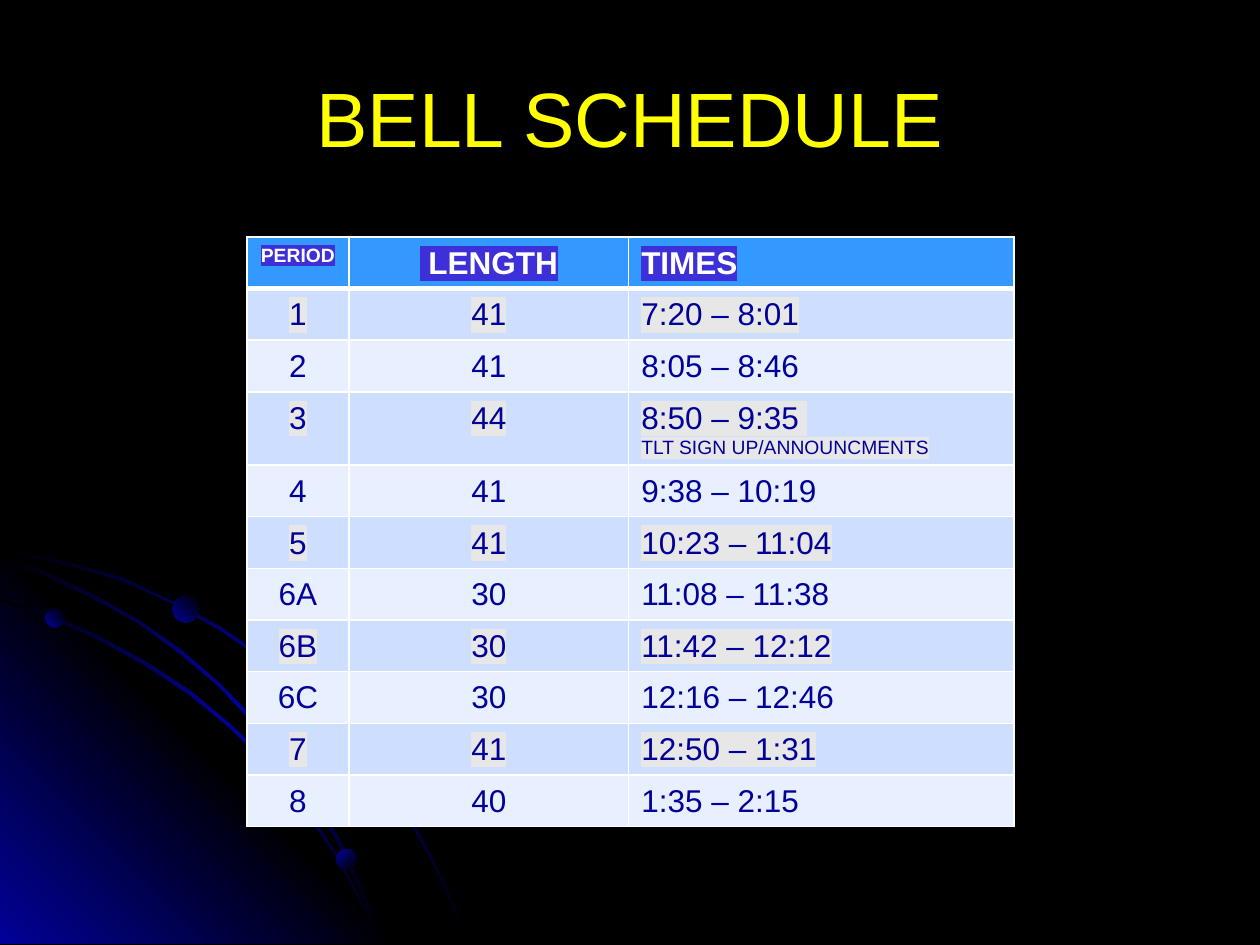
from dataclasses import dataclass

from pptx import Presentation
from pptx.dml.color import RGBColor
from pptx.enum.shapes import MSO_SHAPE
from pptx.enum.text import MSO_ANCHOR, PP_ALIGN
from pptx.oxml import parse_xml
from pptx.oxml.ns import nsdecls, qn
from pptx.util import Inches, Pt


@dataclass(frozen=True)
class Theme:
    font: str = "Arial"
    black: str = "000000"
    navy: str = "010199"
    yellow: str = "FFFF00"
    white: str = "FFFFFF"
    head: str = "3399FF"
    bands: tuple = ("E8EFFF", "CEDEFF")
    head_mark: str = "3E30D9"
    band_mark: str = "E7E7E7"
    title: int = 44
    text: int = 18
    small: int = 11


THEME = Theme()

# Outline points in hundredths of an inch
ARCS = [
    [(57, 447), (28, 441), (0, 435), (0, 438), (28, 443), (56, 449),
     (97, 461), (135, 478), (173, 499), (208, 523), (241, 549), (271, 579),
     (298, 612), (323, 649), (337, 673), (350, 698), (360, 723), (370, 749),
     (372, 749), (362, 723), (352, 698), (339, 673), (325, 648), (300, 611),
     (272, 578), (242, 548), (209, 521), (174, 497), (136, 477), (98, 459)],
    [(285, 714), (294, 732), (301, 749), (303, 749), (296, 730), (286, 712),
     (266, 676), (242, 640), (215, 606), (184, 576), (152, 549), (117, 526),
     (79, 505), (41, 488), (0, 475), (0, 477), (39, 490), (77, 507),
     (115, 528), (150, 551), (183, 578), (213, 608), (240, 641), (265, 677)],
    [(0, 442), (0, 444), (36, 457), (74, 475), (109, 494), (142, 518),
     (173, 544), (202, 575), (227, 605), (252, 641), (267, 667), (280, 694),
     (292, 722), (301, 749), (303, 749), (294, 720), (282, 693), (269, 665),
     (254, 639), (229, 603), (204, 573), (175, 543), (144, 516), (111, 493),
     (76, 473), (39, 455)],
]
CORNER = [(322, 749), (0, 749), (0, 427)]
# Left, top, diameter, gradient angle
DOTS = [(0.36, 4.83, 0.15, 315), (2.67, 6.74, 0.16, 45), (1.37, 4.73, 0.21, 315)]

COLS = (0.81, 2.22, 3.06)
ROW = 0.41
HEADS = ("PERIOD", " LENGTH", "TIMES")
BELLS = [
    ("1", "41", "7:20 – 8:01"),
    ("2", "41", "8:05 – 8:46"),
    ("3", "44", "8:50 – 9:35 \nTLT SIGN UP/ANNOUNCMENTS"),
    ("4", "41", "9:38 – 10:19"),
    ("5", "41", "10:23 – 11:04"),
    ("6A", "30", "11:08 – 11:38"),
    ("6B", "30", "11:42 – 12:12"),
    ("6C", "30", "12:16 – 12:46"),
    ("7", "41", "12:50 – 1:31"),
    ("8", "40", "1:35 – 2:15"),
]


def rgb(code):
    return RGBColor.from_string(code)


def shade(shape, colors, angle):
    """Fill with evenly spaced gradient stops; the angle runs clockwise."""
    shape.shadow.inherit = False
    shape.line.fill.background()
    shape.fill.background()
    step = 100000 // (len(colors) - 1)
    stops = "".join(
        f'<a:gs pos="{i * step}"><a:srgbClr val="{color}"/></a:gs>'
        for i, color in enumerate(colors))
    grad = parse_xml(
        f'<a:gradFill {nsdecls("a")} rotWithShape="1"><a:gsLst>{stops}</a:gsLst>'
        f'<a:lin ang="{angle * 60000}" scaled="1"/></a:gradFill>')
    props = shape._element.spPr
    props.replace(props.find(qn("a:noFill")), grad)


def add_free(slide, points, colors, angle):
    pen = slide.shapes.build_freeform(*points[0], scale=Inches(0.01))
    pen.add_line_segments(points[1:], close=True)
    shade(pen.convert_to_shape(), colors, angle)


def add_dot(slide, left, top, size, angle):
    dot = slide.shapes.add_shape(
        MSO_SHAPE.OVAL, Inches(left), Inches(top), Inches(size), Inches(size))
    shade(dot, (THEME.navy, THEME.black), angle)


def add_decor(slide):
    dark, blue = THEME.black, THEME.navy
    add_free(slide, ARCS[0], (dark, blue, dark), 45)
    add_free(slide, CORNER, (blue, dark, blue), 315)
    for arc in ARCS[1:]:
        add_free(slide, arc, (dark, blue, dark), 45)
    for dot in DOTS:
        add_dot(slide, *dot)


def set_font(para, size, color, bold=False):
    font = para.font
    font.name, font.size, font.bold = THEME.font, Pt(size), bold
    font.color.rgb = rgb(color)


def set_title(slide, text):
    title = slide.shapes.title
    title.left, title.top = Inches(0.5), Inches(0.3)
    title.width, title.height = Inches(9), Inches(1.25)
    frame = title.text_frame
    frame.text = text
    frame.vertical_anchor = MSO_ANCHOR.MIDDLE
    para = frame.paragraphs[0]
    para.alignment = PP_ALIGN.CENTER
    set_font(para, THEME.title, THEME.yellow)


def mark(run, color):
    """Put a highlight behind the run."""
    run._r.get_or_add_rPr().insert(0, parse_xml(
        f'<a:highlight {nsdecls("a")}><a:srgbClr val="{color}"/></a:highlight>'))


def edge(cell, top, bottom):
    """Draw white borders, with the top and bottom widths in points."""
    props = cell._tc.get_or_add_tcPr()
    for i, (side, width) in enumerate(zip("LRTB", (1, 1, top, bottom))):
        props.insert(i, parse_xml(
            f'<a:ln{side} {nsdecls("a")} w="{Pt(width)}"><a:solidFill>'
            f'<a:srgbClr val="{THEME.white}"/></a:solidFill></a:ln{side}>'))


def fill_cell(cell, text, row, col):
    head = row == 0
    hue = THEME.head_mark if head else THEME.band_mark
    cell.fill.solid()
    cell.fill.fore_color.rgb = rgb(THEME.head if head else THEME.bands[row % 2])
    edge(cell, 3 if row == 1 else 1, 3 if head else 1)
    cell.text = text
    for i, para in enumerate(cell.text_frame.paragraphs):
        para.alignment = PP_ALIGN.LEFT if col == 2 else PP_ALIGN.CENTER
        para.line_spacing = 1.07
        small = i > 0 or (head and col == 0)
        set_font(para, THEME.small if small else THEME.text,
                 THEME.white if head else THEME.navy, head)
        if head or row % 2:
            mark(para.runs[0], hue)


def add_bells(slide):
    rows = [HEADS, *BELLS]
    table = slide.shapes.add_table(
        len(rows), len(COLS), Inches(1.96), Inches(1.88),
        Inches(sum(COLS)), Inches(ROW * len(rows))).table
    table.first_row = table.horz_banding = False
    for col, width in zip(table.columns, COLS):
        col.width = Inches(width)
    for r, row in enumerate(rows):
        for c, text in enumerate(row):
            fill_cell(table.cell(r, c), text, r, c)


def main():
    deck = Presentation()
    deck.slide_width, deck.slide_height = Inches(10), Inches(7.5)
    slide = deck.slides.add_slide(deck.slide_layouts[5])
    back = slide.background.fill
    back.solid()
    back.fore_color.rgb = rgb(THEME.black)
    add_decor(slide)
    set_title(slide, "BELL SCHEDULE")
    add_bells(slide)
    deck.save("out.pptx")


if __name__ == "__main__":
    main()
